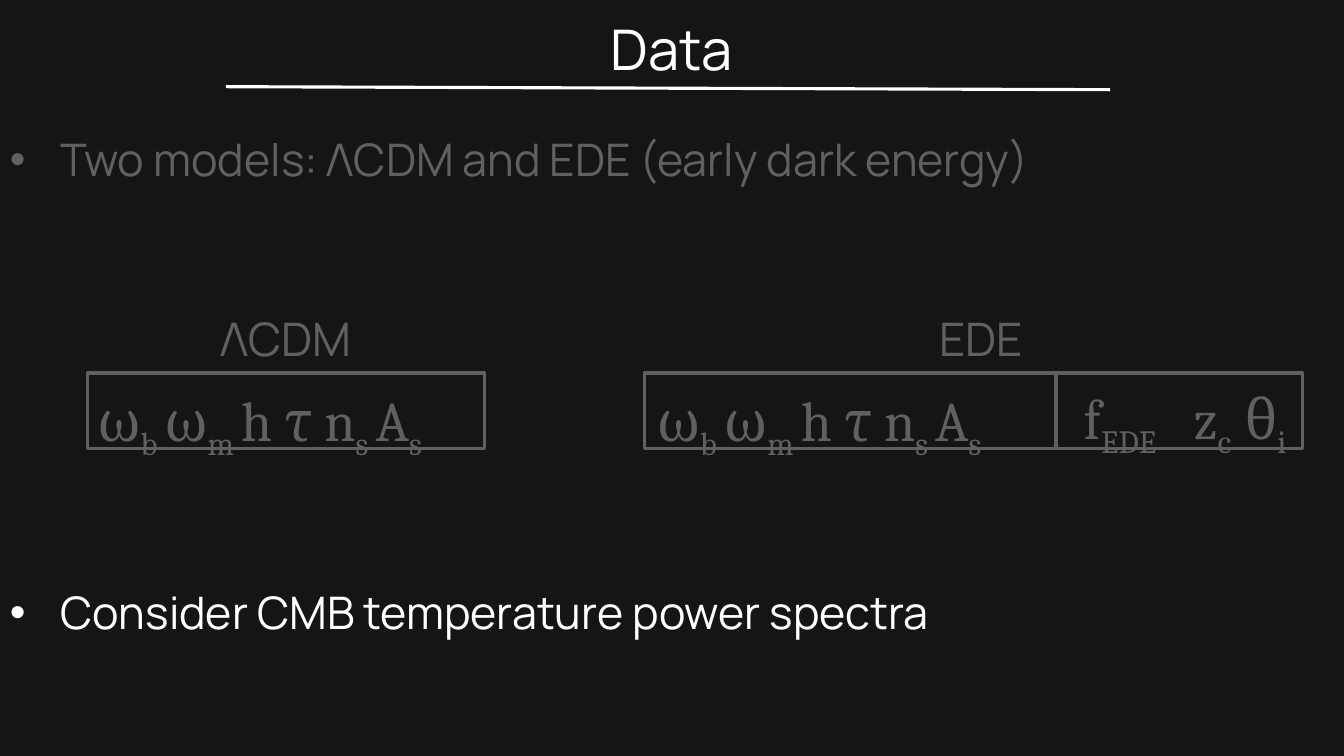
from dataclasses import dataclass

from lxml import etree
from pptx import Presentation, util as u
from pptx.dml.color import RGBColor
from pptx.enum import shapes, text
from pptx.oxml.ns import qn

SCALE = 9144  # EMU per px, 100 px to the inch


@dataclass(frozen=True)
class Theme:
    back: str = "151515"
    bright: str = "FFFFFF"
    dim: str = "606060"
    sans: str = "Manrope"
    math: str = "Cambria"
    title: int = 40
    label: int = 33
    body: int = 32
    symbol: int = 40
    stroke: float = 2.25


def px(*sizes):
    return [u.Emu(size * SCALE) for size in sizes]


class Deck:
    def __init__(self, theme):
        self.theme = theme
        self.file = Presentation()
        self.file.slide_width, self.file.slide_height = px(1333, 750)
        self.slide = self.file.slides.add_slide(self.file.slide_layouts[6])
        fill = self.slide.background.fill
        fill.solid()
        fill.fore_color.rgb = RGBColor.from_string(theme.back)

    def frame(self, *area):
        """Add an empty text box and return its first paragraph."""
        frame = self.slide.shapes.add_textbox(*px(*area)).text_frame
        frame.word_wrap = True
        return frame.paragraphs[0]

    def style(self, font, face, size, color):
        font.name, font.size = face, u.Pt(size)
        font.color.rgb = RGBColor.from_string(color)

    def label(self, words, area, size, color):
        para = self.frame(*area)
        para.text = words
        para.alignment = text.PP_ALIGN.CENTER
        self.style(para.runs[0].font, self.theme.sans, size, color)

    def bullet(self, words, top, color):
        para = self.frame(0, top, 1333, 65)
        para.text = words
        props = para._p.get_or_add_pPr()
        indent = px(50)[0]
        props.set("marL", str(indent))
        props.set("indent", str(-indent))
        etree.SubElement(props, qn("a:buFont")).set("typeface", "Arial")
        etree.SubElement(props, qn("a:buChar")).set("char", "•")
        self.style(para.runs[0].font, self.theme.sans, self.theme.body, color)

    def symbols(self, parts, *area):
        """Write parts that alternate between normal text and subscript."""
        para = self.frame(*area)
        for index, part in enumerate(parts):
            run = para.add_run()
            run.text = part
            self.style(run.font, self.theme.math, self.theme.symbol, self.theme.dim)
            if index % 2:
                run._r.get_or_add_rPr().set("baseline", "-25000")

    def box(self, *area):
        box = self.slide.shapes.add_shape(shapes.MSO_SHAPE.RECTANGLE, *px(*area))
        box.shadow.inherit = False
        box.fill.background()
        self.stroke(box.line, self.theme.dim)

    def rule(self, *ends):
        rule = self.slide.shapes.add_connector(
            shapes.MSO_CONNECTOR.STRAIGHT, *px(*ends))
        self.stroke(rule.line, self.theme.bright)
        etree.SubElement(rule._element.spPr, qn("a:effectLst"))

    def stroke(self, line, color):
        line.color.rgb = RGBColor.from_string(color)
        line.width = u.Pt(self.theme.stroke)


def main():
    theme = Theme()
    deck = Deck(theme)

    deck.label("Data", (0, 9, 1333, 77), theme.title, theme.bright)
    deck.rule(224, 86, 1101, 89)
    deck.bullet("Two models: ΛCDM and EDE (early dark energy)", 126, theme.dim)
    deck.bullet("Consider CMB temperature power spectra", 575, theme.bright)

    for name, left, width in (("ΛCDM", 173, 222), ("EDE", 639, 668)):
        deck.label(name, (left, 303, width, 66), theme.label, theme.dim)
    for left, width in ((87, 394), (639, 408), (1048, 244)):
        deck.box(left, 370, width, 75)

    shared = ("ω", "b ", "ω", "m ", "h τ n", "s ", "A", "s")
    for left in (87, 642):
        deck.symbols(shared, left, 378, 417, 77)
    for parts, left, width in ((("f", "EDE"), 1065, 127),
                               (("z", "c"), 1174, 63),
                               (("θ", "i"), 1225, 63)):
        deck.symbols(parts, left, 376, width, 77)

    deck.file.save("out.pptx")


if __name__ == "__main__":
    main()
